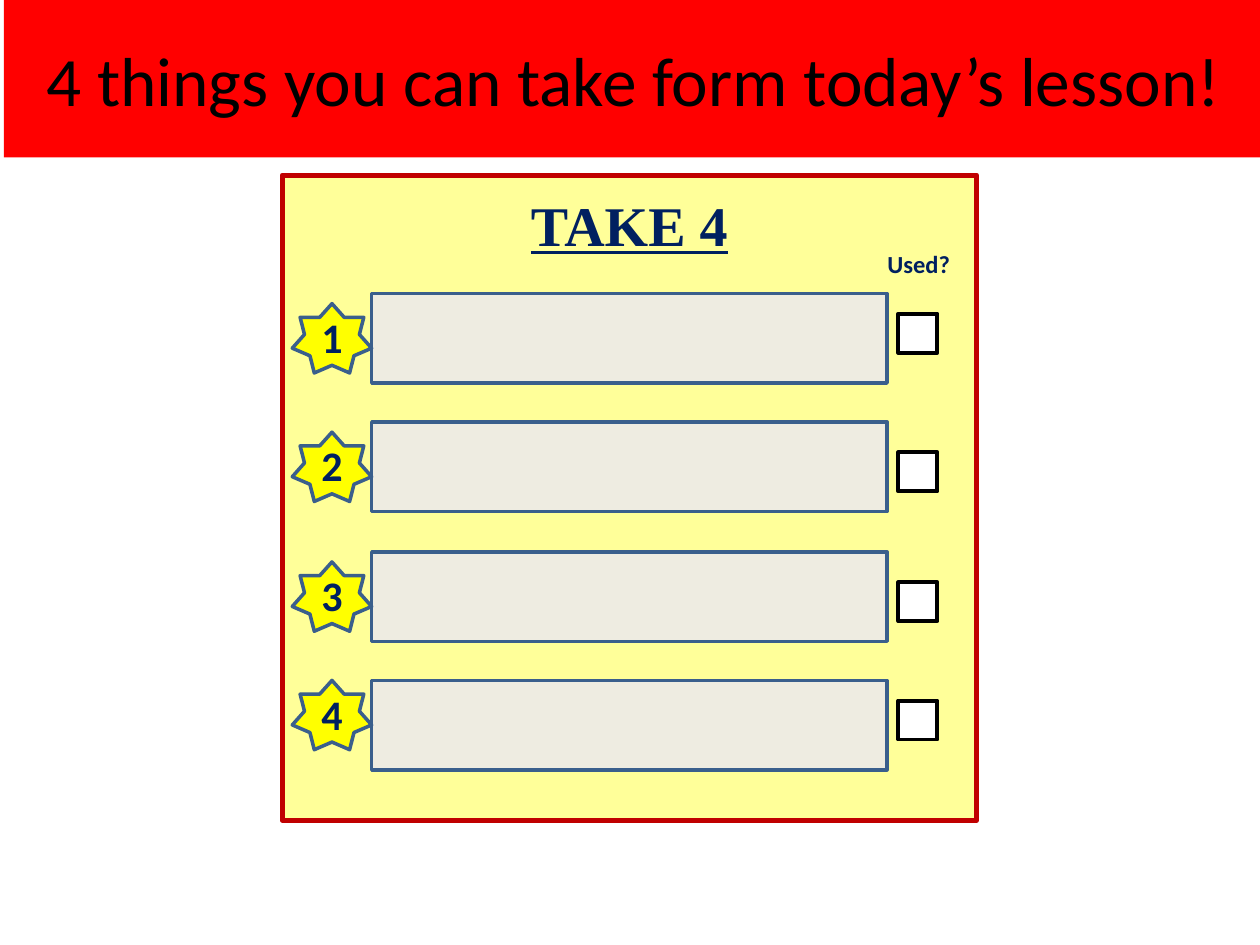
from pptx import Presentation
from pptx.dml.color import RGBColor
from pptx.enum.shapes import MSO_SHAPE
from pptx.enum.text import MSO_ANCHOR, MSO_AUTO_SIZE, PP_ALIGN
from pptx.util import Pt

RECT, STAR = MSO_SHAPE.RECTANGLE, MSO_SHAPE.STAR_7_POINT
TOP, MID = MSO_ANCHOR.TOP, MSO_ANCHOR.MIDDLE
CENTER, RIGHT = PP_ALIGN.CENTER, PP_ALIGN.RIGHT
PX = 9144  # 100 px to the inch


class Theme:
    red, card, edge = "FF0000", "FFFF99", "C00000"
    bar, star, blue = "EEECE1", "FFFF00", "3A5F8C"
    white, black, navy = "FFFFFF", "000000", "002060"
    title = dict(name="Calibri", size=Pt(39.6))
    head = dict(name="Times New Roman", size=Pt(32), bold=True, underline=True)
    num = dict(name="Calibri", size=Pt(24), bold=True)
    note = dict(name="Calibri", size=Pt(14), bold=True)


def color(code):
    return RGBColor.from_string(code)


def paint(shape, fill):
    shape.fill.solid()
    shape.fill.fore_color.rgb = color(fill)


def write(shape, text, font, ink, align=CENTER, anchor=MID, pad=(10, 5, 10, 5)):
    """Set the text; pad is left, top, right, bottom in px."""
    frame = shape.text_frame
    left, top, right, bottom = (n * PX for n in pad)
    look = dict(word_wrap=True, auto_size=MSO_AUTO_SIZE.NONE,
                vertical_anchor=anchor, margin_left=left, margin_top=top,
                margin_right=right, margin_bottom=bottom)
    for key, val in look.items():
        setattr(frame, key, val)
    para = frame.paragraphs[0]
    para.alignment = align
    run = para.add_run()
    run.text = text
    for key, val in font.items():
        setattr(run.font, key, val)
    run.font.color.rgb = color(ink)


def block(slide, kind, box, fill, line=None, width=2):
    shape = slide.shapes.add_shape(kind, *(n * PX for n in box))
    shape.shadow.inherit = False
    paint(shape, fill)
    if line:
        shape.line.color.rgb = color(line)
        shape.line.width = Pt(width)
    else:
        shape.line.fill.background()
    return shape


def banner(slide, box, text):
    title = slide.shapes.title
    for key, val in zip(("left", "top", "width", "height"), box):
        setattr(title, key, val * PX)
    paint(title, Theme.red)
    write(title, text, Theme.title, Theme.black)


def row(slide, x, y, num, star, tick):
    """Draw one answer row; star and tick are drops below the bar top."""
    block(slide, RECT, (x + 71, y, 409, 71), Theme.bar, Theme.blue)
    block(slide, RECT, (x + 489, y + tick, 31, 31),
          Theme.white, Theme.black, 2.25)
    badge = block(slide, STAR, (x + 8, y + star, 63, 55),
                  Theme.star, Theme.blue)
    write(badge, str(num), Theme.num, Theme.navy, pad=(0, 0, 0, 0))


def card(slide, box, drops):
    x, y = box[:2]
    panel = block(slide, RECT, box, Theme.card, Theme.edge, 3)
    write(panel, "TAKE 4", Theme.head, Theme.navy,
          anchor=TOP, pad=(10, 12, 10, 5))
    note = block(slide, RECT, (x + 441, y + 55, 102, 31), Theme.card)
    write(note, "Used?", Theme.note, Theme.navy, RIGHT, pad=(0, 5, 13, 5))
    for i, (star, tick) in enumerate(drops):
        row(slide, x, y + 94 + round(i * 102.33), i + 1, star, tick)


def main():
    deck = Presentation()
    deck.slide_width, deck.slide_height = 1000 * PX, 750 * PX
    slide = deck.slides.add_slide(deck.slide_layouts[5])
    banner(slide, (3, 0, 1000, 125),
           "4 things you can take form today’s lesson!")
    card(slide, (224, 139, 551, 512), ((8, 16), (8, 24), (8, 24), (0, 16)))
    deck.save("out.pptx")


if __name__ == "__main__":
    main()
